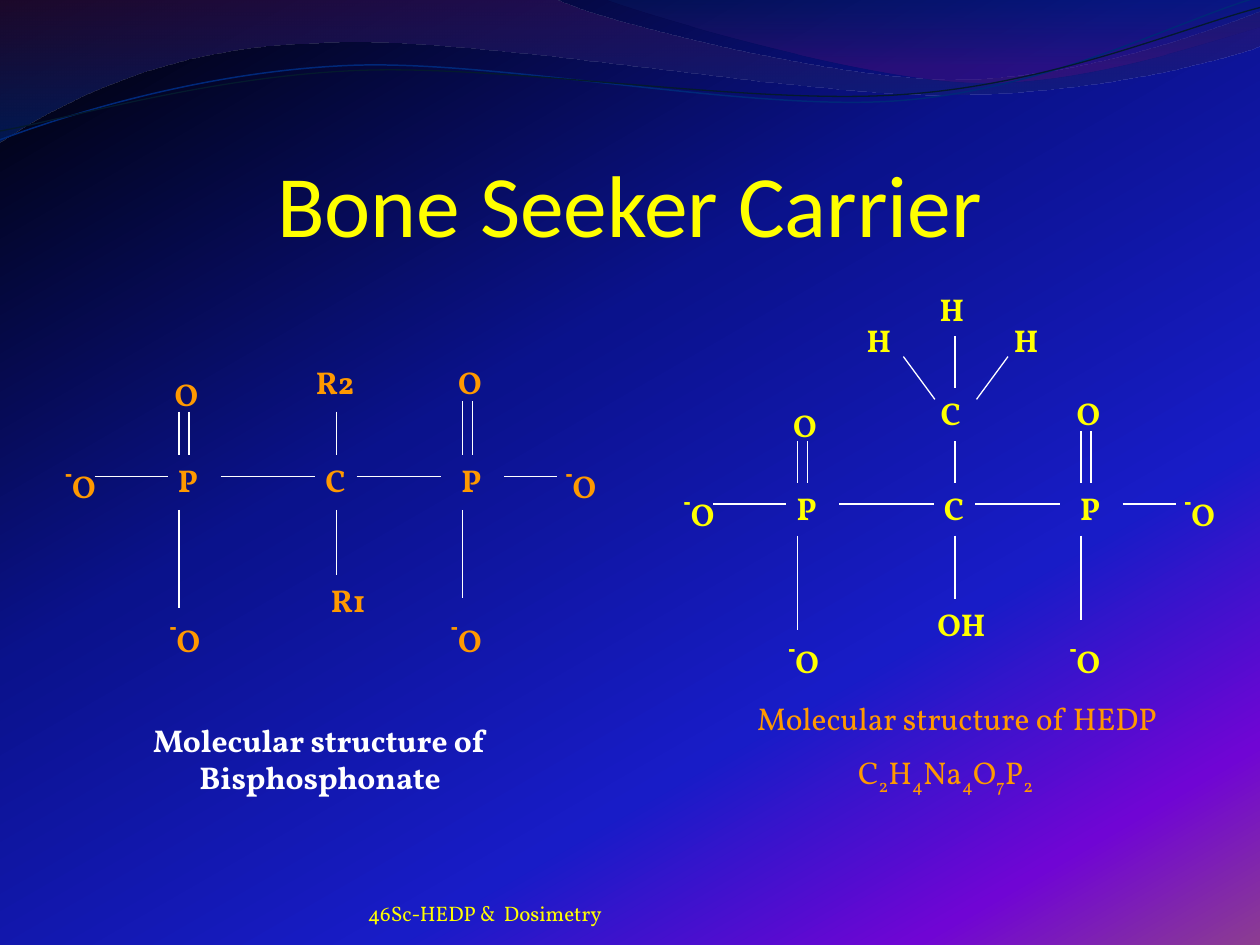
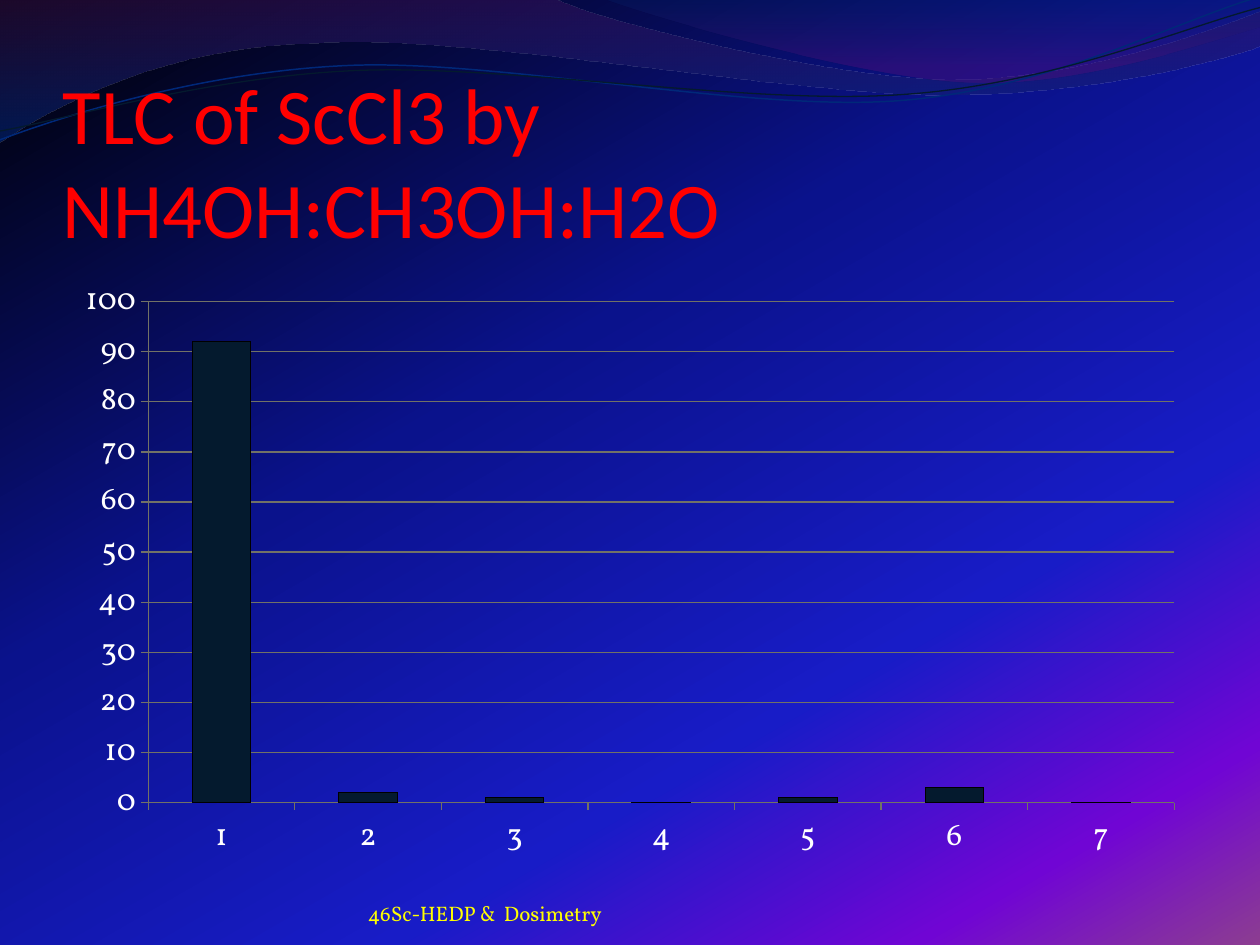
from lxml import etree
from pptx import Presentation
from pptx.chart.data import CategoryChartData
from pptx.dml.color import RGBColor
from pptx.enum import chart as charts, shapes, text
from pptx.oxml.ns import qn
from pptx.util import Inches, Pt

WHITE = RGBColor(0xFF, 0xFF, 0xFF)
BLACK = RGBColor(0x00, 0x00, 0x00)
YELLOW = RGBColor(0xFF, 0xFF, 0x00)
ORANGE = RGBColor(0xFF, 0x99, 0x00)
RED = RGBColor(0xFF, 0x00, 0x00)
NAVY = RGBColor(0x04, 0x1A, 0x2E)
WAVE_BLUE = RGBColor(0x00, 0x28, 0x79)
GRID = RGBColor(0x72, 0x72, 0x66)
PLUM = RGBColor(0x3F, 0x14, 0x5F)
OCEAN = RGBColor(0x00, 0x29, 0x7C)
DEEP_BLUE = RGBColor(0x00, 0x21, 0x65)
VIOLET = RGBColor(0x4C, 0x10, 0x79)

BODY_FONT, TITLE_FONT = "Vollkorn", "Calibri"
LEFT, CENTER, RIGHT = (text.PP_ALIGN.LEFT, text.PP_ALIGN.CENTER, text.PP_ALIGN.RIGHT)

SKY = [
    (0, BLACK, 100),
    (40, RGBColor(0x0A, 0x12, 0x8C), 100),
    (70, RGBColor(0x18, 0x1C, 0xC7), 100),
    (88, RGBColor(0x70, 0x05, 0xD4), 100),
    (100, RGBColor(0x8C, 0x3D, 0x91), 100),
]

# Each wave is a start point followed by line ends (2 numbers) or curves (6 numbers).
BROAD_WAVE = [
    (0, 0), (4.4, -0.01), (4.76, 0.17, 6.64, 0.63, 7.58, 0.63),
    (8.53, 0.63, 9.58, 0.26, 10, 0.09), (10.01, 0.36),
    (9.83, 0.44, 8.7, 0.76, 7.46, 0.75), (6.22, 0.75, 3.82, 0.28, 2.57, 0.34),
    (1.29, 0.36, 0.46, 0.83, -0.01, 1.13),
]
RIGHT_WAVE = [
    (4.79, -0.01), (5.09, 0.11, 6.82, 0.62, 7.69, 0.65),
    (8.56, 0.69, 9.61, 0.32, 10, 0.21), (10, 0),
]
BLUE_STRAND = [
    (0, 1.11), (0.48, 0.93, 1.58, 0.57, 2.77, 0.52),
    (3.95, 0.47, 5.93, 0.89, 7.13, 0.8), (8.33, 0.71, 9.38, 0.15, 9.98, -0.02),
]
DARK_STRAND = [
    (0, 1.04), (0.47, 0.96, 1.64, 0.61, 2.83, 0.56),
    (4.03, 0.51, 5.97, 0.84, 7.17, 0.75), (8.36, 0.67, 9.41, 0.21, 10, 0.06),
]


def paint_gradient(fill, stops, angle):
    """Fill with (position, colour, opacity) stops, turned clockwise by angle."""
    fill.gradient()
    gradient = fill._fill._gradFill
    stop_list = gradient.find(qn("a:gsLst"))
    for stop in list(stop_list):
        stop_list.remove(stop)
    for position, color, opacity in stops:
        stop = etree.SubElement(stop_list, qn("a:gs"), pos=str(position * 1000))
        tint = etree.SubElement(stop, qn("a:srgbClr"), val=str(color))
        if opacity < 100:
            etree.SubElement(tint, qn("a:alpha"), val=str(opacity * 1000))
    gradient.find(qn("a:lin")).set("ang", str(angle * 60000))


def add_wave(slide, outline, closed):
    """Draw an outline given in inches, bending its lines into curves."""
    ends = [(Inches(part[-2]), Inches(part[-1])) for part in outline]
    builder = slide.shapes.build_freeform(*ends[0])
    builder.add_line_segments(ends[1:], close=closed)
    wave = builder.convert_to_shape()
    wave.shadow.inherit = False
    lines = list(wave._element.iter(qn("a:lnTo")))
    for line, part in zip(lines, outline[1:]):
        if len(part) == 6:
            curve = etree.Element(qn("a:cubicBezTo"))
            for x, y in zip(part[::2], part[1::2]):
                etree.SubElement(curve, qn("a:pt"), x=str(Inches(x) - wave.left),
                                 y=str(Inches(y) - wave.top))
            line.getparent().replace(line, curve)
    return wave


def add_band(slide, outline, stops):
    """Add a translucent wave without an edge."""
    band = add_wave(slide, outline, True)
    paint_gradient(band.fill, stops, 90)
    band.line.fill.background()


def add_strand(slide, outline, color, width):
    """Add a thin wavy line."""
    strand = add_wave(slide, outline, False)
    strand.fill.background()
    strand.line.color.rgb = color
    strand.line.width = Pt(width)


def fill_paragraph(para, spans, color, size=18, align=LEFT, bold=False, font=BODY_FONT):
    """Write (wording, baseline percent) spans into a paragraph."""
    para.alignment = align
    for wording, baseline in spans:
        span = para.add_run()
        span.text = wording
        span.font.name = font
        span.font.size = Pt(20 if baseline > 0 else size)
        span.font.bold = bold
        span.font.color.rgb = color
        if baseline:
            span.font._element.set("baseline", str(baseline * 1000))


def add_text(slide, area, spans, color, anchor=text.MSO_ANCHOR.TOP,
             insets=(0.1, 0.05, 0.1, 0.05), **style):
    """Add a wrapped text box with one paragraph and return its frame."""
    frame = slide.shapes.add_textbox(*map(Inches, area)).text_frame
    frame.word_wrap = True
    frame.vertical_anchor = anchor
    (frame.margin_left, frame.margin_top,
     frame.margin_right, frame.margin_bottom) = map(Inches, insets)
    fill_paragraph(frame.paragraphs[0], spans, color, **style)
    return frame


def add_title(slide, wording, top, height, size, color, align):
    """Add the slide title, resting on the bottom of its box."""
    add_text(slide, (0.5, top, 9, height), [(wording, 0)], color, size=size, align=align,
             font=TITLE_FONT, anchor=text.MSO_ANCHOR.BOTTOM, insets=(0, 0.05, 0, 0))


def add_base_slide(deck):
    """Add a slide with the shared background, waves and footer."""
    slide = deck.slides.add_slide(deck.slide_layouts[6])
    paint_gradient(slide.background.fill, SKY, 60)
    add_band(slide, BROAD_WAVE, [(0, PLUM, 45), (100, OCEAN, 55)])
    add_band(slide, RIGHT_WAVE, [(0, DEEP_BLUE, 30), (80, VIOLET, 45)])
    add_strand(slide, BLUE_STRAND, WAVE_BLUE, 0.85)
    add_strand(slide, DARK_STRAND, NAVY, 0.75)
    add_text(slide, (2.92, 6.95, 3.67, 0.4), [("46Sc-HEDP &  Dosimetry", 0)], YELLOW,
             size=12, anchor=text.MSO_ANCHOR.BOTTOM, insets=(0, 0, 0, 0))
    return slide


def add_bond(slide, x1, y1, x2, y2):
    """Add a thin white bond."""
    bond = slide.shapes.add_connector(
        shapes.MSO_CONNECTOR.STRAIGHT, *map(Inches, (x1, y1, x2, y2)))
    bond.line.color.rgb = WHITE
    bond.line.width = Pt(0.75)
    etree.SubElement(bond._element.spPr, qn("a:effectLst"))


def add_atom(slide, symbol, x, y, color, width=0.42, align=RIGHT):
    """Add a right-to-left atom label, so that a raised charge stands before it."""
    spans = [(part, 50 if part == "-" else 0) for part in symbol.split()]
    frame = add_text(slide, (x, y, width, 0.4), spans, color, align=align, bold=True)
    frame.paragraphs[0]._p.get_or_add_pPr().set("rtl", "1")


def add_backbone(slide, left, top, stretch, color):
    """Add the P-C-P chain with its oxygens; top is the level of the chain."""
    atoms = [
        ("O", 3.08, -0.75, 0.42, RIGHT), ("P", 0.83, 0, 0.42, RIGHT),
        ("P", 3.08, 0, 0.42, RIGHT), ("O", 0.83, -0.66, 0.42, RIGHT),
        ("O -", 0, 0, 0.58, None), ("O -", 3.91, 0, 0.5, RIGHT),
        ("O -", 3, 1.17, 0.5, RIGHT), ("O -", 0.83, 1.17, 0.58, None),
        ("C", 2, 0, 0.42, RIGHT),
    ]
    for symbol, x, y, width, align in atoms:
        add_atom(slide, symbol, left + x, top + y * stretch, color, width, align)
    for start, end in [(0.33, 0.91), (1.33, 2.08), (2.41, 3.08), (3.58, 4)]:
        add_bond(slide, left + start, top + 0.17, left + end, top + 0.17)
    uprights = [
        (1, -0.33, 0), (1.08, -0.33, 0), (3.25, -0.41, 0), (3.33, -0.41, 0),
        (2.25, -0.33, 0), (1, 0.42, 1.17), (2.25, 0.42, 0.92), (3.25, 0.42, 1.09),
    ]
    for x, start, end in uprights:
        add_bond(slide, left + x, top + start * stretch, left + x, top + end * stretch)


def add_bisphosphonate(slide):
    """Add the general bisphosphonate structure and its caption."""
    add_backbone(slide, 0.42, 3.61, 1.04, ORANGE)
    add_atom(slide, "R1", 2.33, 4.56, ORANGE, 0.67)
    add_atom(slide, "R2", 2.33, 2.83, ORANGE, 0.58)
    add_text(slide, (0.25, 5.67, 4.58, 0.71),
             [("Molecular structure of Bisphosphonate", 0)], WHITE, align=CENTER, bold=True)


def add_hedp(slide):
    """Add the HEDP structure with its caption and formula."""
    add_backbone(slide, 5.33, 3.83, 1, YELLOW)
    add_atom(slide, "C", 7.17, 3.08, YELLOW, 0.75, CENTER)
    add_atom(slide, "OH", 7.25, 4.75, YELLOW, 0.67)
    for x, y in [(6.75, 2.5), (7.33, 2.25), (7.92, 2.5)]:
        add_atom(slide, "H", x, y, YELLOW)
    for ends in [(7.42, 3.17, 7.17, 2.83), (7.58, 3.08, 7.58, 2.67), (7.75, 3.17, 8, 2.83)]:
        add_bond(slide, *ends)
    caption = add_text(slide, (5.42, 5.5, 4.17, 0.86),
                       [("Molecular structure of HEDP", 0)], ORANGE, align=CENTER)
    caption.paragraphs[0]._p.get_or_add_pPr().set("marL", str(Inches(0.18)))
    formula = caption.add_paragraph()
    formula.space_before = Pt(9)
    parts = ["C", "2", "H", "4", "Na", "4", "O", "7", "P", "2"]
    fill_paragraph(formula, [(part, -25 if part.isdigit() else 0) for part in parts],
                   ORANGE, align=CENTER)


def add_tlc_chart(slide):
    """Add the column chart of the seven strips."""
    data = CategoryChartData()
    data.categories = [str(number) for number in range(1, 8)]
    data.add_series("Series 1", (92, 2, 1, 0, 1, 3, 0))
    chart = slide.shapes.add_chart(
        charts.XL_CHART_TYPE.COLUMN_CLUSTERED,
        *map(Inches, (0.5, 2.12, 9, 4.8)), data).chart
    chart.has_legend = False
    chart.has_title = False
    chart.font.name = BODY_FONT
    chart.font.size = Pt(18)
    chart.font.color.rgb = WHITE
    plot = chart.plots[0]
    plot.gap_width = 150
    plot.vary_by_categories = False
    columns = plot.series[0].format
    columns.fill.solid()
    columns.fill.fore_color.rgb = NAVY
    columns.line.color.rgb = BLACK
    for axis in (chart.category_axis, chart.value_axis):
        axis.major_tick_mark = charts.XL_TICK_MARK.OUTSIDE
        axis.format.line.color.rgb = GRID
    scale = chart.value_axis
    scale.minimum_scale, scale.maximum_scale, scale.major_unit = 0, 100, 10
    scale.has_major_gridlines = True
    scale.major_gridlines.format.line.color.rgb = GRID


def main():
    """Build and save the deck."""
    deck = Presentation()
    deck.slide_width, deck.slide_height = Inches(10), Inches(7.5)

    carrier = add_base_slide(deck)
    add_title(carrier, "Bone Seeker Carrier", 0.77, 1.25, 50, YELLOW, CENTER)
    add_bisphosphonate(carrier)
    add_hedp(carrier)

    tlc = add_base_slide(deck)
    add_title(tlc, "TLC of ScCl3 by NH4OH:CH3OH:H2O", 0.58, 1.44, 45, RED, LEFT)
    add_tlc_chart(tlc)

    deck.save("out.pptx")


if __name__ == "__main__":
    main()
